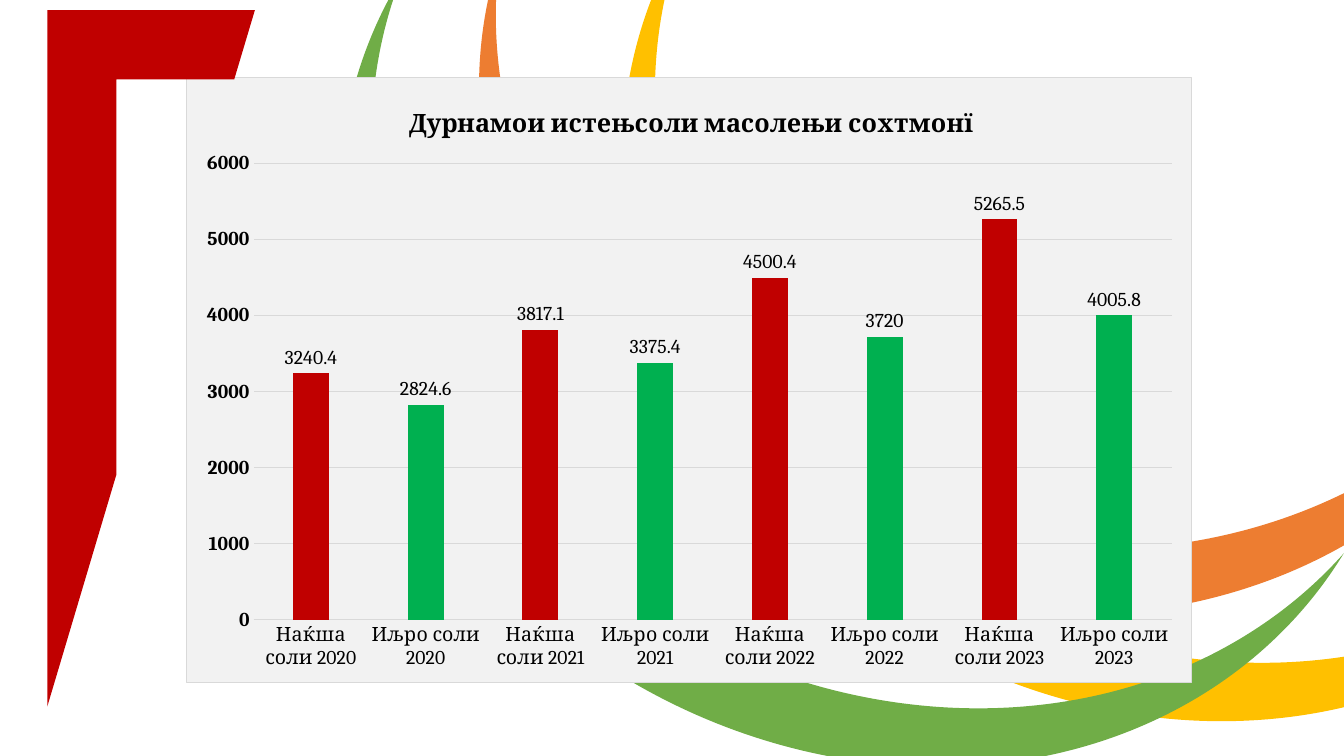
from lxml import etree
from pptx import Presentation
from pptx.chart.data import CategoryChartData
from pptx.dml.color import RGBColor
from pptx.enum.chart import XL_CHART_TYPE, XL_LABEL_POSITION, XL_TICK_MARK
from pptx.enum.shapes import MSO_SHAPE
from pptx.oxml import parse_xml
from pptx.util import Pt

MOON, HALF_FRAME = MSO_SHAPE.MOON, MSO_SHAPE.HALF_FRAME
COLUMNS = XL_CHART_TYPE.COLUMN_CLUSTERED
OUTSIDE_END = XL_LABEL_POSITION.OUTSIDE_END
NO_TICK = XL_TICK_MARK.NONE

ORANGE = RGBColor(0xED, 0x7D, 0x31)
YELLOW = RGBColor(0xFF, 0xC0, 0x00)
LEAF = RGBColor(0x70, 0xAD, 0x47)
RED = RGBColor(0xC0, 0x00, 0x00)
GREEN = RGBColor(0x00, 0xB0, 0x50)
BLUE = RGBColor(0x5B, 0x9B, 0xD5)
BLACK = RGBColor(0, 0, 0)
GRAY = RGBColor(0xD9, 0xD9, 0xD9)
PALE = RGBColor(0xF2, 0xF2, 0xF2)

NS = {
    "c": "http://schemas.openxmlformats.org/drawingml/2006/chart",
    "a": "http://schemas.openxmlformats.org/drawingml/2006/main",
}
XMLNS = " ".join(f'xmlns:{prefix}="{uri}"' for prefix, uri in NS.items())

TITLE = "Дурнамои истењсоли масолењи сохтмонї "
YEARS = range(2020, 2024)
KINDS = {"Наќша": RED, "Иљро": GREEN}  # plan and performance
OUTPUT = (3240.4, 2824.6, 3817.1, 3375.4, 4500.4, 3720, 5265.5, 4005.8)


def set_font(font, size=14, bold=False):
    style = {"name": "Cambria", "size": Pt(size), "bold": bold}
    for attribute, value in style.items():
        setattr(font, attribute, value)
    font.color.rgb = BLACK


def set_line(line):
    line.color.rgb = GRAY
    line.width = Pt(0.75)


def add_plain_shape(slide, preset, box, color):
    shape = slide.shapes.add_shape(preset, *map(Pt, box))
    shape.shadow.inherit = False
    shape.fill.solid()
    shape.fill.fore_color.rgb = color
    shape.line.fill.background()
    return shape


def make_layout(inner=False, **fractions):
    """Manual layout in fractions of the chart area."""
    layout = etree.Element(f"{{{NS['c']}}}layout")
    manual = etree.SubElement(layout, f"{{{NS['c']}}}manualLayout")
    settings = {"layoutTarget": "inner"} if inner else {}
    settings |= {"xMode": "edge", "yMode": "edge"} | fractions
    for tag, value in settings.items():
        etree.SubElement(manual, f"{{{NS['c']}}}{tag}", val=str(value))
    return layout


def replace_layout(parent, layout, index):
    for old in parent.findall("c:layout", NS):
        parent.remove(old)
    parent.insert(index, layout)


def draw_crescents(slide, box):
    """Three moons of one size, each turned around its own centre."""
    left, top, width, height = box
    crescents = (
        (145, -82, 288.1, ORANGE),
        (202.5, -32.5, 301.4, YELLOW),
        (0, 0, 301.4, LEAF),
    )
    for dx, dy, angle, color in crescents:
        moon = add_plain_shape(slide, MOON, (left + dx, top + dy, width, height), color)
        moon.adjustments[0] = 0.145
        moon.rotation = angle


def draw_corner(slide, box):
    add_plain_shape(slide, HALF_FRAME, box, RED)


def style_axes(chart):
    for axis, bold in ((chart.category_axis, False), (chart.value_axis, True)):
        axis.major_tick_mark = axis.minor_tick_mark = NO_TICK
        set_font(axis.tick_labels.font, bold=bold)
    set_line(chart.category_axis.format.line)
    values = chart.value_axis
    values.format.line.fill.background()
    values.minimum_scale, values.maximum_scale, values.major_unit = 0, 6000, 1000
    set_line(values.major_gridlines.format.line)


def style_columns(chart):
    plot = chart.plots[0]
    plot.gap_width, plot.overlap = 219, -27
    plot.vary_by_categories = False
    series = plot.series[0]
    series.format.fill.solid()
    series.format.fill.fore_color.rgb = BLUE
    colors = list(KINDS.values())
    for index in range(len(OUTPUT)):
        fill = series.points[index].format.fill
        fill.solid()
        fill.fore_color.rgb = colors[index % len(colors)]
    labels = series.data_labels
    labels.show_value = True
    labels.position = OUTSIDE_END
    set_font(labels.font)


def draw_output_chart(slide, box):
    output = CategoryChartData()
    output.categories = [f"{kind} соли {year}" for year in YEARS for kind in KINDS]
    output.add_series("Series 1", OUTPUT)
    chart = slide.shapes.add_chart(COLUMNS, *map(Pt, box), output).chart
    set_font(chart.font)
    chart.has_legend = False

    # Title
    chart.has_title = True
    paragraph = chart.chart_title.text_frame.paragraphs[0]
    run = paragraph.add_run()
    run.text = TITLE
    set_font(run.font, 18, True)
    chart.chart_title.include_in_layout = False

    style_axes(chart)
    style_columns(chart)

    # Places of the title and the plot
    space = chart.element
    replace_layout(space.find(".//c:title", NS), make_layout(x=0.217, y=0.04), 1)
    plot_layout = make_layout(inner=True, x=0.067, y=0.142, w=0.913, h=0.755)
    replace_layout(space.find(".//c:plotArea", NS), plot_layout, 0)

    # Background and border
    background = parse_xml(
        f'<c:spPr {XMLNS}><a:solidFill><a:srgbClr val="{PALE}"/></a:solidFill>'
        f'<a:ln w="{Pt(0.75)}"><a:solidFill><a:srgbClr val="{GRAY}"/></a:solidFill>'
        "</a:ln></c:spPr>"
    )
    space.find("c:txPr", NS).addprevious(background)


def main():
    deck = Presentation()
    deck.slide_width, deck.slide_height = Pt(960), Pt(540)
    slide = deck.slides.add_slide(deck.slide_layouts[6])
    draw_crescents(slide, (362, -58.3, 343.4, 789))
    draw_output_chart(slide, (132.7, 55.2, 719, 432.5))
    draw_corner(slide, (33.8, 7.2, 148.3, 497.5))
    deck.save("out.pptx")


if __name__ == "__main__":
    main()
